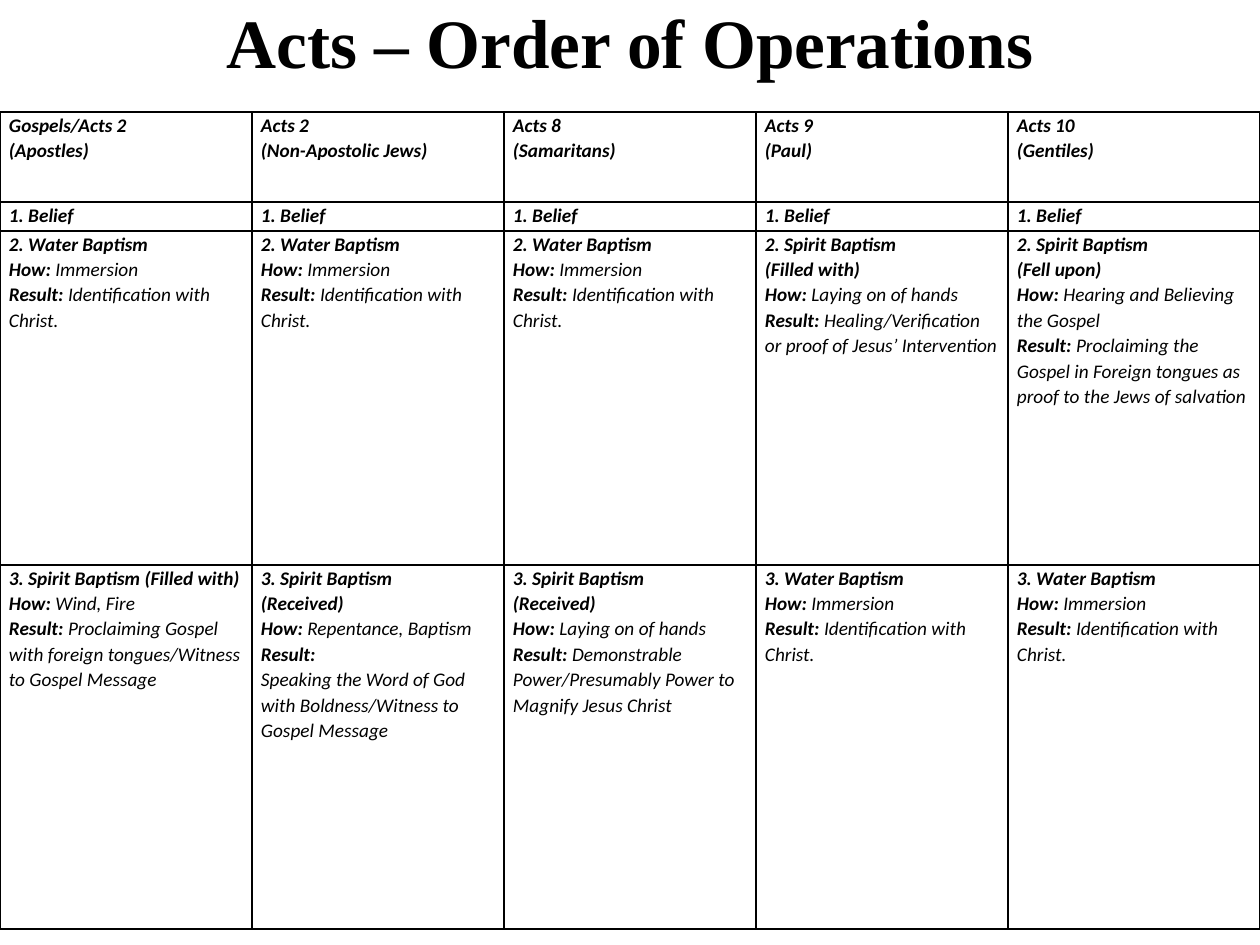
from dataclasses import dataclass

from lxml import etree
from pptx import Presentation
from pptx.dml.color import RGBColor
from pptx.enum.text import MSO_ANCHOR, PP_ALIGN
from pptx.oxml.ns import qn
from pptx.util import Emu, Pt

CENTER, LEFT = PP_ALIGN.CENTER, PP_ALIGN.LEFT
TOP, MIDDLE = MSO_ANCHOR.TOP, MSO_ANCHOR.MIDDLE
PX_PER_INCH = 126
COLORS = {"text": "000000", "border": "000000", "background": "FFFFFF"}
TITLE_FONT, TABLE_FONT = "Times New Roman", "Calibri"

SLIDE_W, SLIDE_H = 1260, 945
TITLE_H = 93
TABLE_TOP = 112
ROW_HEIGHTS = [90, 29, 334, 364]
CELL_INSET = 9


@dataclass(frozen=True)
class Line:
    """One paragraph: a bold label followed by a plain detail."""
    label: str
    detail: str = ""


def px(n: int) -> Emu:
    return Emu(round(n * 914400 / PX_PER_INCH))


def step(*headings: str, how: str, result: str) -> list[Line]:
    return [*map(Line, headings), Line("How: ", how), Line("Result: ", result)]


def water_baptism(number: int) -> list[Line]:
    return step(f"{number}. Water Baptism", how="Immersion",
                result="Identification with Christ.")


def add_run(p, text: str, font: str, size: float, bold: bool, italic: bool) -> None:
    r = p.add_run()
    r.text = text
    r.font.name = font
    r.font.size = Pt(size)
    r.font.bold = bold
    r.font.italic = italic
    r.font.color.rgb = RGBColor.from_string(COLORS["text"])


def set_borders(cell) -> None:
    tc_pr = cell._tc.get_or_add_tcPr()
    for i, side in enumerate(("lnL", "lnR", "lnT", "lnB")):
        ln = etree.Element(qn(f"a:{side}"), w=str(Pt(1)))
        fill = etree.SubElement(ln, qn("a:solidFill"))
        etree.SubElement(fill, qn("a:srgbClr"), val=COLORS["border"])
        tc_pr.insert(i, ln)


def fill_cell(cell, lines: list[Line]) -> None:
    cell.fill.solid()
    cell.fill.fore_color.rgb = RGBColor.from_string(COLORS["background"])
    set_borders(cell)
    cell.margin_left = cell.margin_right = px(CELL_INSET)
    cell.margin_top = cell.margin_bottom = 0
    cell.vertical_anchor = TOP
    tf = cell.text_frame
    for i, line in enumerate(lines):
        p = tf.add_paragraph() if i else tf.paragraphs[0]
        p.alignment = LEFT
        p.line_spacing = 1.07
        for text, bold in ((line.label, True), (line.detail, False)):
            if text:
                add_run(p, text, TABLE_FONT, 11, bold, True)


def add_title(s, text: str) -> None:
    sp = s.shapes.title
    sp.left, sp.top, sp.width, sp.height = 0, 0, px(SLIDE_W), px(TITLE_H)
    tf = sp.text_frame
    tf.word_wrap = True
    tf.vertical_anchor = MIDDLE
    p = tf.paragraphs[0]
    p.alignment = CENTER
    p.line_spacing = 0.9
    add_run(p, text, TITLE_FONT, 39.6, True, False)


def add_grid(s, rows: list[list[list[Line]]]) -> None:
    n_cols = len(rows[0])
    table = s.shapes.add_table(len(rows), n_cols, 0, px(TABLE_TOP),
                               px(SLIDE_W), px(sum(ROW_HEIGHTS))).table
    table.first_row = table.horz_banding = False
    for col in table.columns:
        col.width = px(SLIDE_W // n_cols)
    for r, (cells, height) in enumerate(zip(rows, ROW_HEIGHTS)):
        table.rows[r].height = px(height)
        for c, lines in enumerate(cells):
            fill_cell(table.cell(r, c), lines)


# Table content, one column for each group in Acts
GROUPS = [
    ("Gospels/Acts 2", "(Apostles)"),
    ("Acts 2", "(Non-Apostolic Jews)"),
    ("Acts 8", "(Samaritans)"),
    ("Acts 9", "(Paul)"),
    ("Acts 10", "(Gentiles)"),
]
SECOND_STEPS = [
    *[water_baptism(2)] * 3,
    step("2. Spirit Baptism", "(Filled with)", how="Laying on of hands",
         result="Healing/Verification or proof of Jesus’ Intervention"),
    step("2. Spirit Baptism", "(Fell upon)", how="Hearing and Believing the Gospel",
         result="Proclaiming the Gospel in Foreign tongues as proof to the Jews "
                "of salvation"),
]
THIRD_STEPS = [
    step("3. Spirit Baptism (Filled with)", how="Wind, Fire",
         result="Proclaiming Gospel with foreign tongues/Witness to Gospel Message"),
    [Line("3. Spirit Baptism"), Line("(Received)"),
     Line("How: ", "Repentance, Baptism"), Line("Result:"),
     Line("", "Speaking the Word of God with Boldness/Witness to Gospel Message")],
    step("3. Spirit Baptism", "(Received)", how="Laying on of hands",
         result="Demonstrable Power/Presumably Power to Magnify Jesus Christ"),
    *[water_baptism(3)] * 2,
]


def main() -> None:
    prs = Presentation()
    prs.slide_width, prs.slide_height = px(SLIDE_W), px(SLIDE_H)
    s = prs.slides.add_slide(prs.slide_layouts[5])

    add_title(s, "Acts – Order of Operations")
    add_grid(s, [
        [[Line(text) for text in group] for group in GROUPS],
        [[Line("1. Belief")]] * len(GROUPS),
        SECOND_STEPS,
        THIRD_STEPS,
    ])
    prs.save("out.pptx")


if __name__ == "__main__":
    main()
